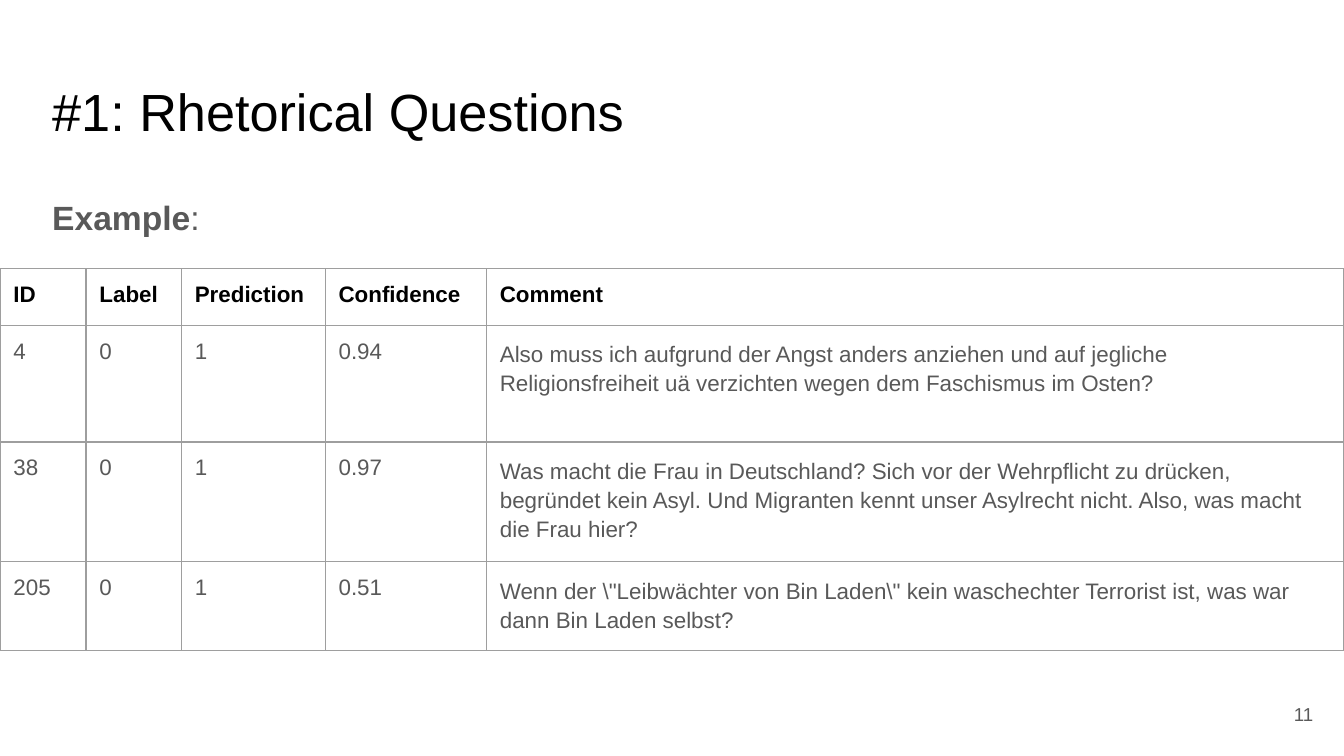
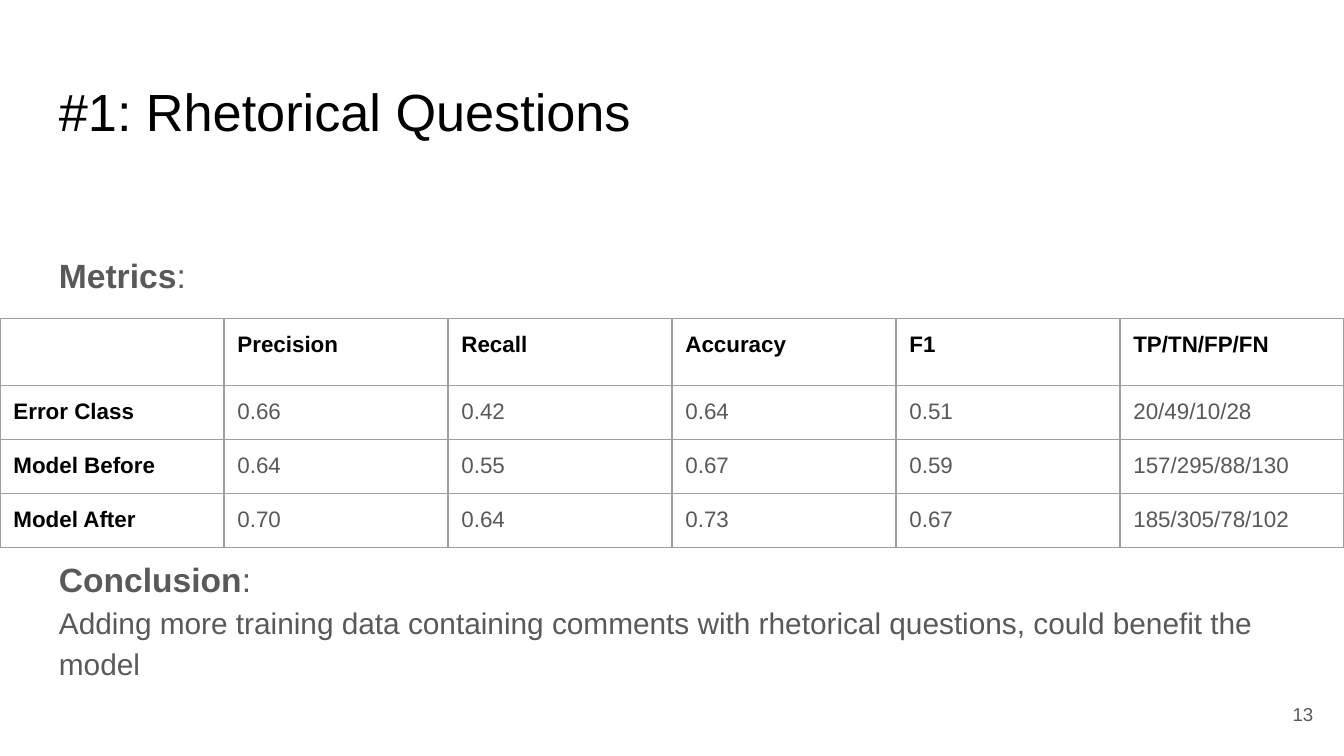
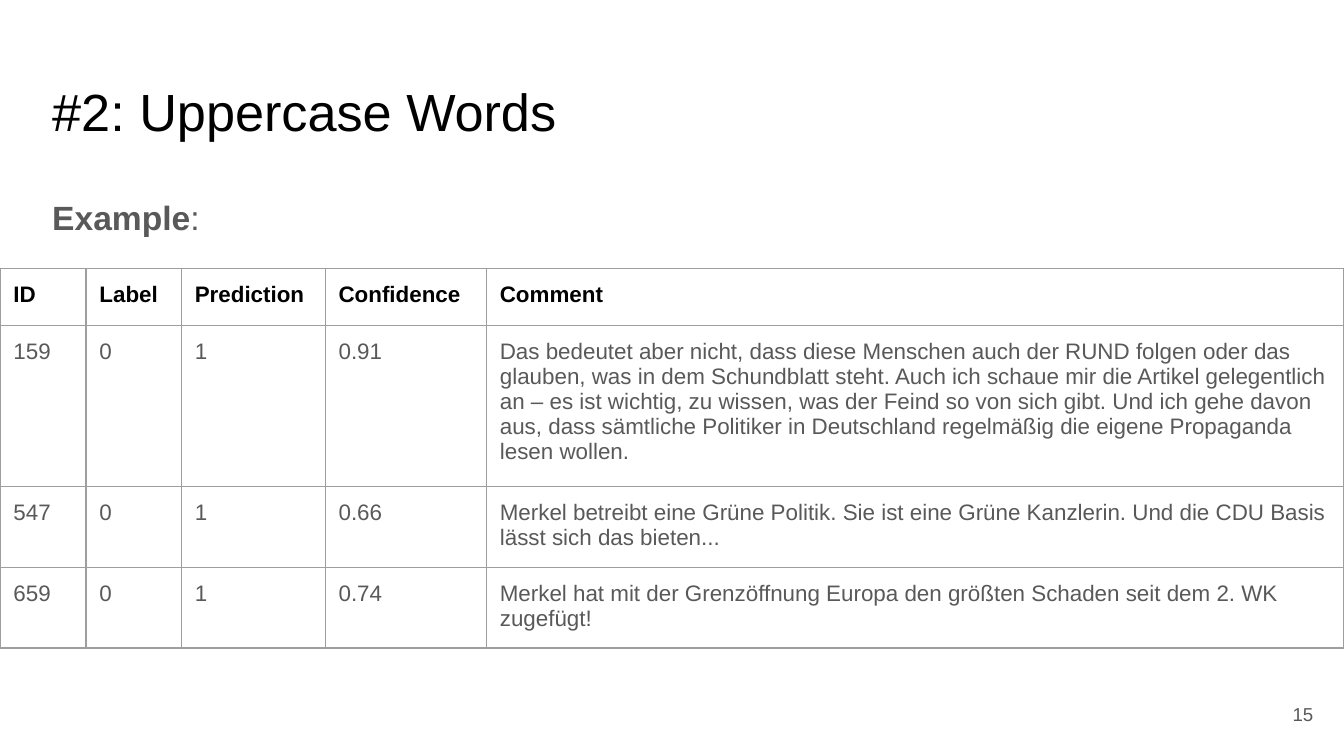
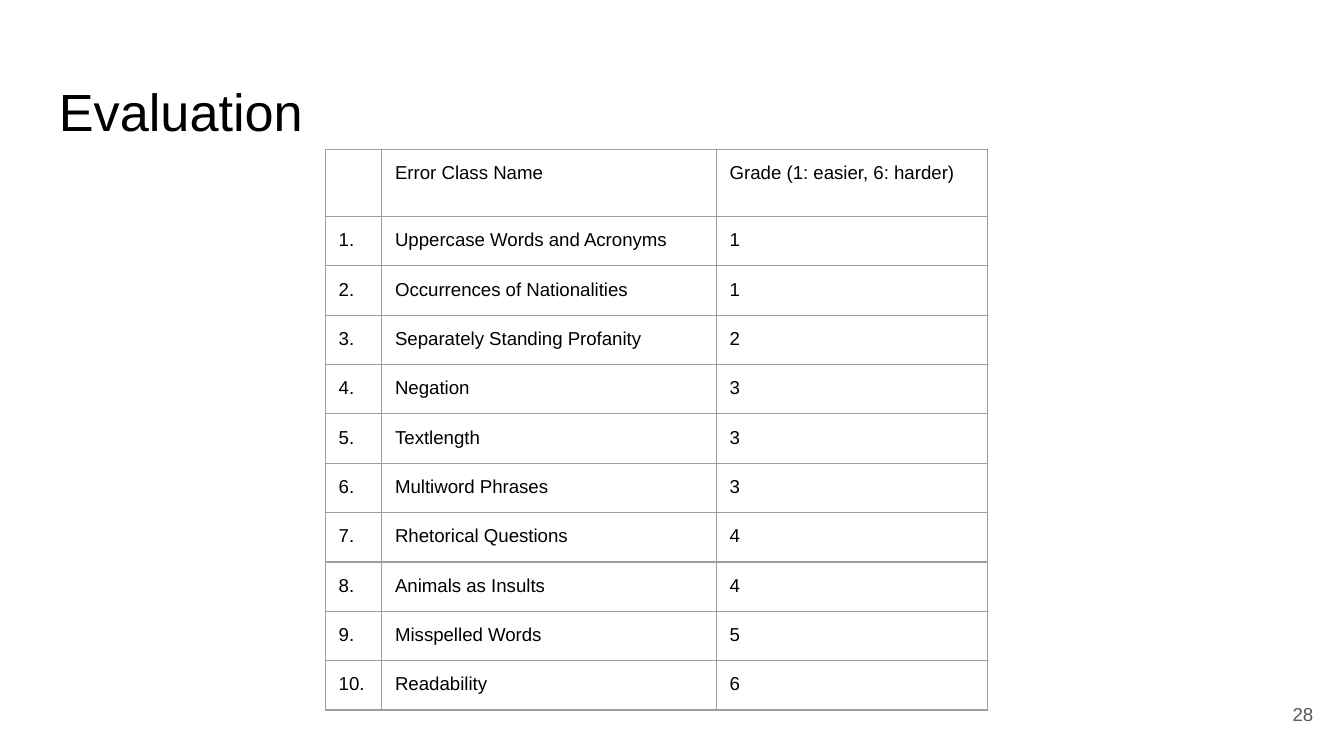
from dataclasses import dataclass

from lxml import etree
from pptx import Presentation
from pptx import util as u
from pptx.dml.color import RGBColor
from pptx.enum import text as t
from pptx.oxml.ns import qn


@dataclass(frozen=True)
class Theme:
    font: str = "Arial"
    ink: str = "000000"
    muted: str = "595959"
    rule: str = "9E9E9E"
    paper: str = "FFFFFF"
    title: int = 28
    heading: int = 18
    body: int = 16
    cell: int = 12
    small: int = 10
    rule_width: float = 0.75
    inset: float = 0.1
    leading: float = 1.15


THEME = Theme()
SLIDE_WIDTH = 10
GRID_FRAME = 3.28  # nominal frame side; rows and columns set the drawn size
EXAMPLE_COLUMNS = [0.64, 0.71, 1.07, 1.2, 6.38]
EXAMPLE_ROWS = [0.42, 0.87, 0.42, 0.42]
EXAMPLE_HEADER = ["ID", "Label", "Prediction", "Confidence", "Comment"]

RHETORICAL = [
    ["4", "0", "1", "0.94",
     "Also muss ich aufgrund der Angst anders anziehen und auf jegliche "
     "Religionsfreiheit uä verzichten wegen dem Faschismus im Osten?"],
    ["38", "0", "1", "0.97",
     "Was macht die Frau in Deutschland? Sich vor der Wehrpflicht zu drücken, "
     "begründet kein Asyl. Und Migranten kennt unser Asylrecht nicht. "
     "Also, was macht die Frau hier?"],
    ["205", "0", "1", "0.51",
     r'Wenn der \"Leibwächter von Bin Laden\" kein waschechter Terrorist ist, '
     "was war dann Bin Laden selbst?"],
]
UPPERCASE = [
    ["159", "0", "1", "0.91",
     "Das bedeutet aber nicht, dass diese Menschen auch der RUND folgen oder das "
     "glauben, was in dem Schundblatt steht. Auch ich schaue mir die Artikel "
     "gelegentlich an – es ist wichtig, zu wissen, was der Feind so von sich gibt. "
     "Und ich gehe davon aus, dass sämtliche Politiker in Deutschland regelmäßig "
     "die eigene Propaganda lesen wollen."],
    ["547", "0", "1", "0.66",
     "Merkel betreibt eine Grüne Politik. Sie ist eine Grüne Kanzlerin. "
     "Und die CDU Basis lässt sich das bieten..."],
    ["659", "0", "1", "0.74",
     "Merkel hat mit der Grenzöffnung Europa den größten Schaden seit dem 2. WK "
     "zugefügt!"],
]
METRICS = [
    ["", "Precision", "Recall", "Accuracy", "F1", "TP/TN/FP/FN"],
    ["Error Class", "0.66", "0.42", "0.64", "0.51", "20/49/10/28"],
    ["Model Before", "0.64", "0.55", "0.67", "0.59", "157/295/88/130"],
    ["Model After", "0.70", "0.64", "0.73", "0.67", "185/305/78/102"],
]
GRADES = [
    ("Uppercase Words and Acronyms", 1),
    ("Occurrences of Nationalities", 1),
    ("Separately Standing Profanity", 2),
    ("Negation", 3),
    ("Textlength", 3),
    ("Multiword Phrases", 3),
    ("Rhetorical Questions", 4),
    ("Animals as Insults", 4),
    ("Misspelled Words", 5),
    ("Readability", 6),
]


# Text helpers
def write(paragraph, words, *, size, color=THEME.ink, bold=False, align=None,
          leading=None, before=None, after=None):
    """Append one formatted run to a paragraph and set any spacing given."""
    run = paragraph.add_run()
    run.text = words
    run.font.name = THEME.font
    run.font.size = u.Pt(size)
    run.font.bold = bold
    run.font.color.rgb = RGBColor.from_string(color)
    if align is not None:
        paragraph.alignment = align
    if leading is not None:
        paragraph.line_spacing = leading
    if before is not None:
        paragraph.space_before = u.Pt(before)
    if after is not None:
        paragraph.space_after = u.Pt(after)


def set_insets(holder):
    inset = u.Inches(THEME.inset)
    holder.margin_left = holder.margin_right = inset
    holder.margin_top = holder.margin_bottom = inset


def text_frame(slide, box, anchor=t.MSO_ANCHOR.TOP):
    frame = slide.shapes.add_textbox(*map(u.Inches, box)).text_frame
    frame.word_wrap = True
    frame.vertical_anchor = anchor
    set_insets(frame)
    return frame


def write_heading(paragraph, words, **spacing):
    """Bold word followed by a regular colon."""
    for part, bold in ((words, True), (":", False)):
        write(paragraph, part, size=THEME.heading, color=THEME.muted, bold=bold,
              leading=THEME.leading, **spacing)


# Table helpers
def draw_borders(cell):
    properties = cell._tc.get_or_add_tcPr()
    for position, side in enumerate(("lnL", "lnR", "lnT", "lnB")):
        line = etree.Element(qn(f"a:{side}"), w=str(u.Pt(THEME.rule_width)))
        fill = etree.SubElement(line, qn("a:solidFill"))
        etree.SubElement(fill, qn("a:srgbClr"), val=THEME.rule)
        properties.insert(position, line)


def add_grid(slide, left, top, columns, heights, rows, style):
    """Fill a ruled table; style(row, column) gives the format of a cell."""
    side = u.Inches(GRID_FRAME)
    frame = slide.shapes.add_table(len(rows), len(columns), u.Inches(left),
                                   u.Inches(top), side, side)
    grid = frame.table
    grid.first_row = grid.horz_banding = False
    for column, width in zip(grid.columns, columns):
        column.width = u.Inches(width)
    for row, height in zip(grid.rows, heights):
        row.height = u.Inches(height)
    frame.width = frame.height = side
    for r, values in enumerate(rows):
        for c, value in enumerate(values):
            cell = grid.cell(r, c)
            cell.fill.background()
            set_insets(cell)
            draw_borders(cell)
            if value:
                write(cell.text_frame.paragraphs[0], value, **style(r, c))


def label_style(is_label):
    return dict(size=THEME.cell, bold=is_label,
                color=THEME.ink if is_label else THEME.muted)


# Shared slide frame: background, title and page number
def start_slide(deck, title, number, left=0.34):
    slide = deck.slides.add_slide(deck.slide_layouts[6])
    slide.background.fill.solid()
    slide.background.fill.fore_color.rgb = RGBColor.from_string(THEME.paper)
    heading = text_frame(slide, (left, 0.49, 9.32, 0.63))
    write(heading.paragraphs[0], title, size=THEME.title)
    page = text_frame(slide, (9.27, 5.1, 0.6, 0.43), t.MSO_ANCHOR.MIDDLE)
    write(page.paragraphs[0], str(number), size=THEME.small, color=THEME.muted,
          align=t.PP_ALIGN.RIGHT)
    return slide


# Slide types
def example_slide(deck, title, number, comments, gaps_after=None):
    """gaps_after, if given, opens up the comments: one gap for each row."""
    left = 0.29
    slide = start_slide(deck, title, number, left)

    def style(row, column):
        form = label_style(row == 0)
        if gaps_after and row > 0 and column == len(EXAMPLE_COLUMNS) - 1:
            form |= dict(leading=THEME.leading, after=gaps_after[row - 1])
        return form

    add_grid(slide, 0, 2, EXAMPLE_COLUMNS, EXAMPLE_ROWS,
             [EXAMPLE_HEADER, *comments], style)
    example = text_frame(slide, (left, 1.32, 3.49, 0.63))
    write_heading(example.paragraphs[0], "Example", after=16)


def metrics_slide(deck, title, number):
    slide = start_slide(deck, title, number)

    # Headings above and below the table share one text body
    body = text_frame(slide, (0.34, 1.75, 9.32, 3.25))
    write_heading(body.paragraphs[0], "Metrics")
    conclusion = body.add_paragraph()
    write_heading(conclusion, "Conclusion", before=138)
    conclusion.add_line_break()
    write(conclusion, "Adding more training data containing comments with rhetorical "
          "questions, could benefit the model", size=THEME.body, color=THEME.muted)

    count = len(METRICS[0])
    add_grid(slide, 0, 2.37, [SLIDE_WIDTH / count] * count,
             [0.11, 0.11, 0.11, 0.32], METRICS,
             lambda row, column: label_style(row == 0 or column == 0))


def evaluation_slide(deck, title, number):
    slide = start_slide(deck, title, number)
    rows = [["", "Error Class Name", "Grade (1: easier, 6: harder)"]]
    rows += [[f"{rank}.", name, str(grade)]
             for rank, (name, grade) in enumerate(GRADES, 1)]
    heights = [0.35, 0.19] + [0.35] * (len(GRADES) - 1)
    add_grid(slide, 2.42, 1.11, [0.42, 2.49, 2.02], heights, rows,
             lambda row, column: dict(size=THEME.small))


def main():
    deck = Presentation()
    deck.slide_width = u.Inches(SLIDE_WIDTH)
    deck.slide_height = deck.slide_width * 9 // 16
    example_slide(deck, "#1: Rhetorical Questions", 11, RHETORICAL, [10, 12, 12])
    metrics_slide(deck, "#1: Rhetorical Questions", 13)
    example_slide(deck, "#2: Uppercase Words", 15, UPPERCASE)
    evaluation_slide(deck, "Evaluation", 28)
    deck.save("out.pptx")


if __name__ == "__main__":
    main()
